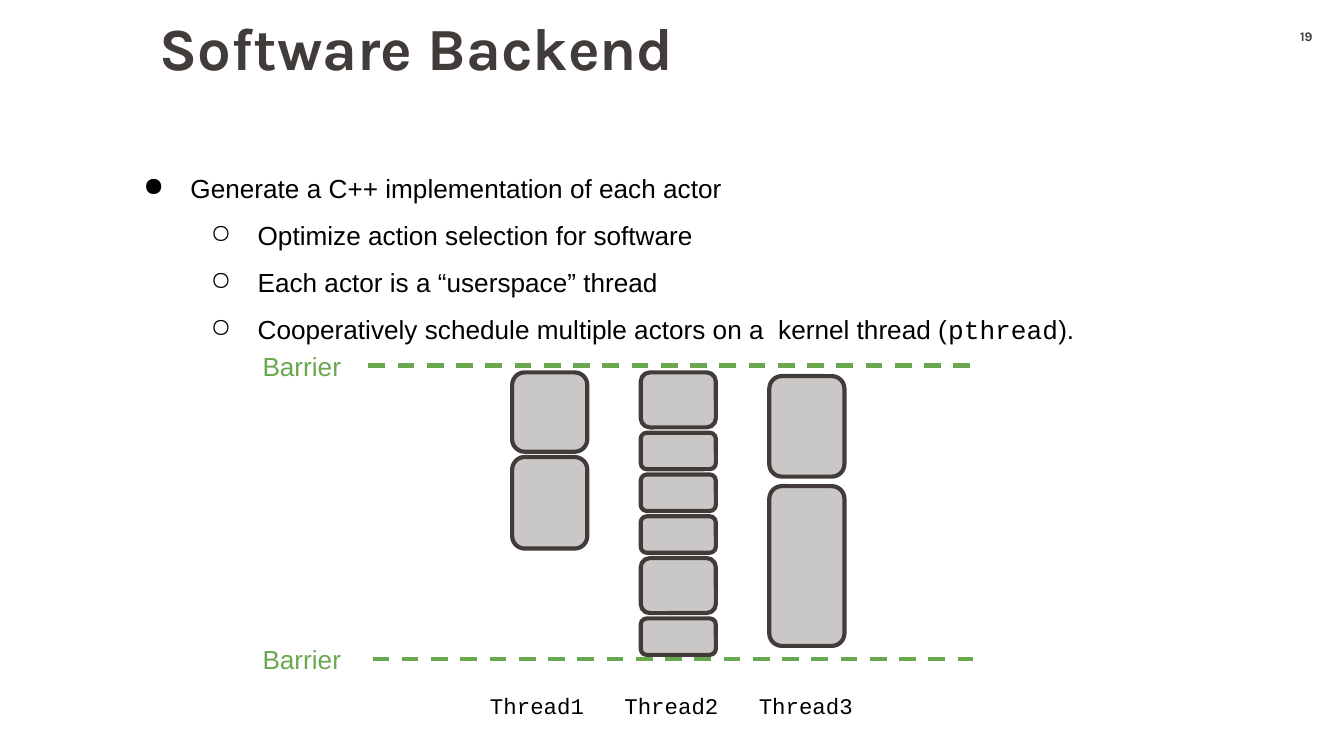
import lxml.etree
import pptx
import pptx.dml.color
import pptx.enum.dml
import pptx.enum.shapes
import pptx.enum.text
import pptx.oxml.ns
import pptx.util
from dataclasses import dataclass

Cm = pptx.util.Cm
Pt = pptx.util.Pt
ALIGN = pptx.enum.text.PP_ALIGN


@dataclass(frozen=True)
class Theme:
    dark: str = "413C3A"
    block: str = "CAC7C7"
    barrier: str = "6AA84F"
    text: str = "000000"
    heading_font: str = "Karla"
    body_font: str = "Arial"
    code_font: str = "Courier New"
    title_size: float = 32
    body_size: float = 14
    thread_size: float = 12
    number_size: float = 7
    line_width: float = 2.25


THEME = Theme()

TITLE = "Software Backend"
PAGE_NUMBER = "19"
CODE_WORDS = {"pthread"}
# (level, runs)
BULLETS = [
    (0, ["Generate a C++ implementation of each actor"]),
    (1, ["Optimize action selection for software"]),
    (1, ["Each actor is a “userspace” thread"]),
    (1, ["Cooperatively schedule multiple actors on a  kernel thread (", "pthread", ")."]),
]
BULLET_CHARS = "●○"
# Block heights run from top to bottom, in cm
THREADS = [
    {"name": "Thread1", "top": 7.04, "gap": 0.1, "heights": [1.5, 1.73]},
    {"name": "Thread2", "top": 7.04, "gap": 0.1, "heights": [1.04, 0.69, 0.69, 0.69, 1.04, 0.69]},
    {"name": "Thread3", "top": 7.11, "gap": 0.18, "heights": [1.9, 3.02]},
]
# (left, right, y) of each dashed line, in cm
BARRIERS = [(6.96, 18.34, 6.91), (7.04, 18.39, 12.45)]

BLOCK_LEFT, BLOCK_PITCH, BLOCK_WIDTH = 9.68, 2.43, 1.42
LABEL_LEFT, LABEL_PITCH = 8.84, 2.54


def rgb(color):
    return pptx.dml.color.RGBColor.from_string(color)


def style_run(r, font, size, color, bold=False):
    r.font.name = font
    r.font.size = Pt(size)
    r.font.bold = bold
    r.font.color.rgb = rgb(color)


def add_text_frame(s, left, top, width, height, insets=(0.25, 0.25, 0.25, 0.25)):
    """Add a wrapping text box; insets are left, top, right, bottom in cm."""
    tf = s.shapes.add_textbox(Cm(left), Cm(top), Cm(width), Cm(height)).text_frame
    tf.word_wrap = True
    tf.margin_left, tf.margin_top, tf.margin_right, tf.margin_bottom = map(Cm, insets)
    return tf


def write_line(tf, text, font, size, color, bold=False, align=ALIGN.CENTER):
    p = tf.paragraphs[0]
    p.text = text
    p.alignment = align
    style_run(p.runs[0], font, size, color, bold)
    return p


def set_bullet(p, level):
    p.level = level
    p.line_spacing = 1.5
    pPr = p._p.get_or_add_pPr()
    pPr.set("marL", str(Cm(1.27 * (level + 1))))
    pPr.set("indent", str(Cm(-0.89)))
    qn = pptx.oxml.ns.qn
    color = lxml.etree.SubElement(pPr, qn("a:buClr"))
    lxml.etree.SubElement(color, qn("a:srgbClr")).set("val", THEME.text)
    lxml.etree.SubElement(pPr, qn("a:buChar")).set("char", BULLET_CHARS[level])


def add_bullets(s):
    tf = add_text_frame(s, 2.08, 2.72, 21.89, 3.81)
    for i, (level, runs) in enumerate(BULLETS):
        p = tf.add_paragraph() if i else tf.paragraphs[0]
        set_bullet(p, level)
        for text in runs:
            r = p.add_run()
            r.text = text
            font = THEME.code_font if text in CODE_WORDS else THEME.body_font
            style_run(r, font, THEME.body_size, THEME.text)


def add_barrier(s, left, right, y):
    line = s.shapes.add_connector(
        pptx.enum.shapes.MSO_CONNECTOR.STRAIGHT, Cm(left), Cm(y), Cm(right), Cm(y))
    line.line.color.rgb = rgb(THEME.barrier)
    line.line.width = Pt(THEME.line_width)
    line.line.dash_style = pptx.enum.dml.MSO_LINE.DASH
    lxml.etree.SubElement(line._element.spPr, pptx.oxml.ns.qn("a:effectLst"))
    tf = add_text_frame(s, 4.45, y - 0.54, 2.51, 1.12)
    write_line(tf, "Barrier", THEME.body_font, THEME.body_size, THEME.barrier)


def add_thread(s, column, thread):
    left, top = BLOCK_LEFT + column * BLOCK_PITCH, thread["top"]
    for height in thread["heights"]:
        sp = s.shapes.add_shape(
            pptx.enum.shapes.MSO_SHAPE.ROUNDED_RECTANGLE,
            Cm(left), Cm(top), Cm(BLOCK_WIDTH), Cm(height))
        sp.shadow.inherit = False
        sp.fill.solid()
        sp.fill.fore_color.rgb = rgb(THEME.block)
        sp.line.color.rgb = rgb(THEME.dark)
        sp.line.width = Pt(THEME.line_width)
        top += height + thread["gap"]
    tf = add_text_frame(s, LABEL_LEFT + column * LABEL_PITCH, 12.83, 2.62, 1.02)
    write_line(tf, thread["name"], THEME.code_font, THEME.thread_size, THEME.text)


def main():
    prs = pptx.Presentation()
    prs.slide_width, prs.slide_height = Cm(25.4), Cm(14.29)
    s = prs.slides.add_slide(prs.slide_layouts[6])

    tf = add_text_frame(s, 2.51, 0.36, 21.95, 1.9, (0.51, 0, 0.2, 0.13))
    p = write_line(tf, TITLE, THEME.heading_font, THEME.title_size, THEME.dark, True, ALIGN.LEFT)
    p.line_spacing = 0.9
    tf = add_text_frame(s, 23.98, 0.53, 1.42, 0.46, (0.25, 0, 0.25, 0))
    write_line(tf, PAGE_NUMBER, THEME.heading_font, THEME.number_size, THEME.dark, True)

    add_bullets(s)
    for column, thread in enumerate(THREADS):
        add_thread(s, column, thread)
    for barrier in BARRIERS:
        add_barrier(s, *barrier)
    prs.save("out.pptx")


if __name__ == "__main__":
    main()
